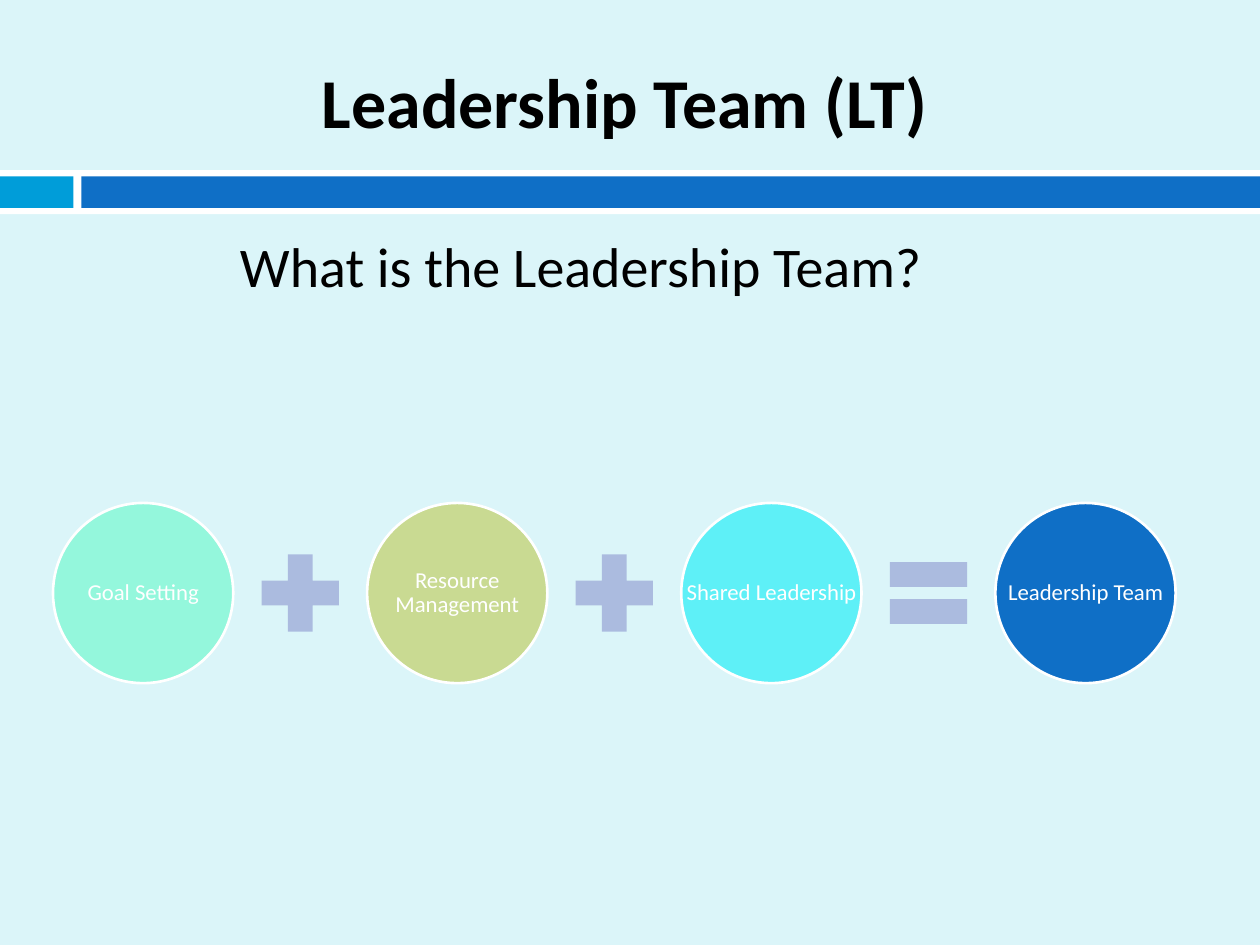
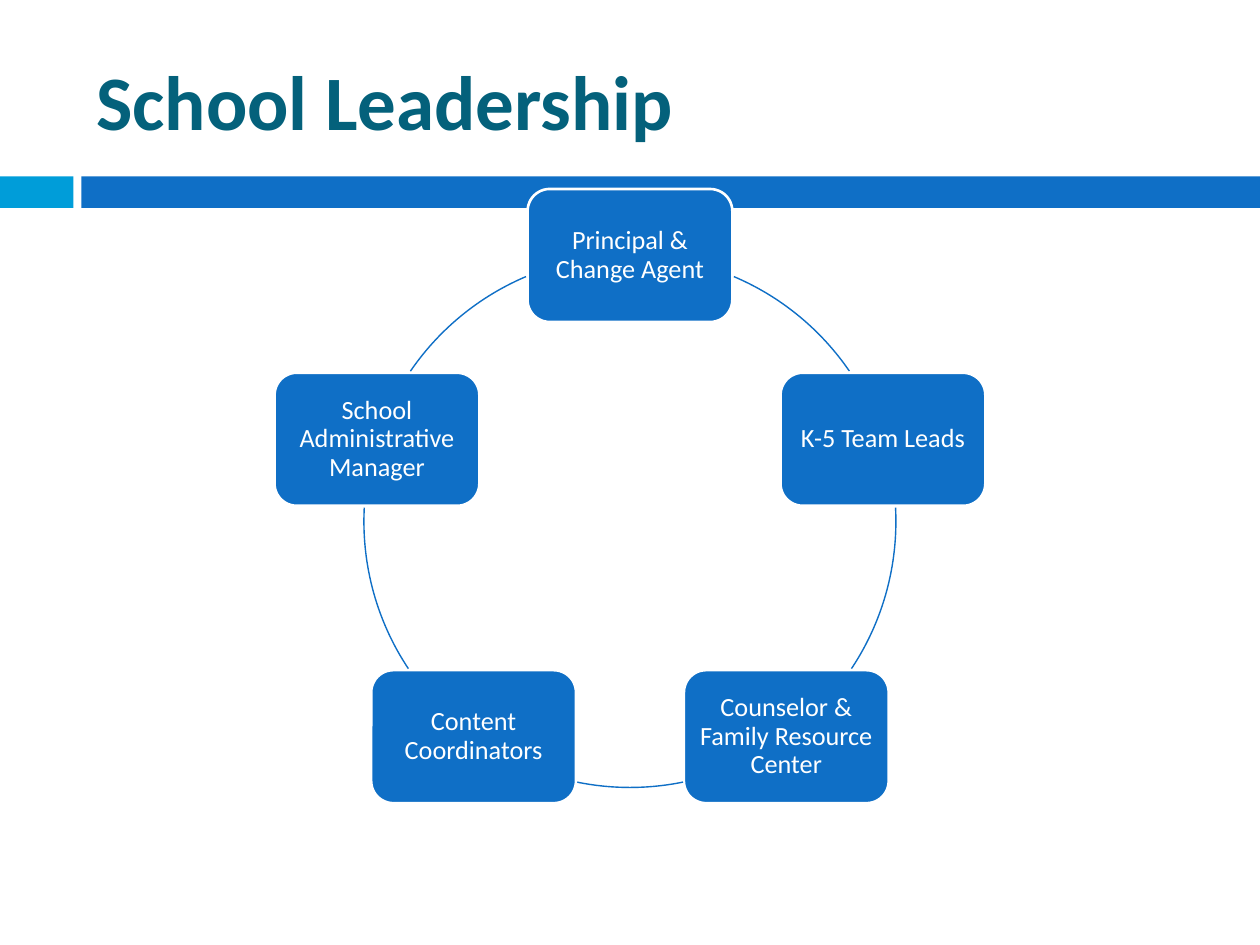
from math import cos, radians, sin

from pptx import Presentation
from pptx.dml.color import RGBColor
from pptx.enum.shapes import MSO_SHAPE
from pptx.enum.text import MSO_ANCHOR, PP_ALIGN
from pptx.util import Pt

FONT = "Calibri"
BLACK, WHITE, TEAL = "000000", "FFFFFF", "04617B"
BLUE, SKY, PALE, LAVENDER = "0F6FC6", "009DD9", "DBF5F9", "ABBBDF"
rgb = RGBColor.from_string


def add_block(slide, preset, left, top, width, height, fill=None, line=None, weight=1.5):
    """Draw a preset shape without shadow; fill and line are optional."""
    block = slide.shapes.add_shape(preset, Pt(left), Pt(top), Pt(width), Pt(height))
    block.shadow.inherit = False
    for paint, colour in ((block.fill, fill), (block.line.fill, line)):
        if colour:
            paint.solid()
            paint.fore_color.rgb = rgb(colour)
        else:
            paint.background()
    if line:
        block.line.width = Pt(weight)
    return block


def write(holder, text, size, colour, bold=False, align=PP_ALIGN.CENTER,
          anchor=MSO_ANCHOR.MIDDLE, inset=None, spacing=None, wrap=True):
    """Fill a shape or text box with one paragraph; a newline breaks the line."""
    frame = holder.text_frame
    frame.word_wrap = wrap
    frame.vertical_anchor = anchor
    if inset is not None:
        frame.margin_left = frame.margin_right = Pt(inset)
        frame.margin_top = frame.margin_bottom = Pt(inset)
    paragraph = frame.paragraphs[0]
    paragraph.alignment = align
    paragraph.line_spacing = spacing
    for number, words in enumerate(text.split("\n")):
        if number:
            paragraph.add_line_break()
        run = paragraph.add_run()
        run.text = words
        run.font.name = FONT
        run.font.size = Pt(size)
        run.font.bold = bold
        run.font.color.rgb = rgb(colour)


deck = Presentation()
deck.slide_width, deck.slide_height = Pt(720), Pt(540)

# Background and bands of both slides
slides = []
for background in (PALE, WHITE):
    slide = deck.slides.add_slide(deck.slide_layouts[6])
    slide.background.fill.solid()
    slide.background.fill.fore_color.rgb = rgb(background)
    add_block(slide, MSO_SHAPE.RECTANGLE, 0, 97.2, 720, 25.2, WHITE)
    add_block(slide, MSO_SHAPE.RECTANGLE, 0, 100.8, 42, 18, SKY)
    add_block(slide, MSO_SHAPE.RECTANGLE, 46.5, 100.8, 673.5, 18, BLUE)
    slides.append(slide)
team_slide, school_slide = slides

# Slide 1: the sum that makes up the Leadership Team
title = team_slide.shapes.add_textbox(Pt(18), Pt(30.2), Pt(678), Pt(55.5))
write(title, "Leadership Team (LT)", 40, BLACK, bold=True, anchor=MSO_ANCHOR.TOP)
question = team_slide.shapes.add_textbox(Pt(29), Pt(129), Pt(606), Pt(50))
write(question, "What is the Leadership Team?", 32, BLACK, anchor=MSO_ANCHOR.TOP)

terms = [
    ("Goal Setting", "94F7DC", MSO_SHAPE.MATH_PLUS),
    ("Resource\nManagement", "C9DA92", MSO_SHAPE.MATH_PLUS),
    ("Shared Leadership", "5EF0F7", MSO_SHAPE.MATH_EQUAL),
    ("Leadership Team", BLUE, None),
]
circle_size, sign_size, term_step, middle = 103, 60, 179.5, 338.9
for number, (term, colour, sign) in enumerate(terms):
    left = 30.3 + number * term_step
    circle = add_block(team_slide, MSO_SHAPE.OVAL, left, middle - circle_size / 2,
                       circle_size, circle_size, colour, WHITE)
    write(circle, term, 13, WHITE, inset=1.5, spacing=0.9, wrap=False)
    if sign:
        sign_left = left + (circle_size + term_step - sign_size) / 2
        add_block(team_slide, sign, sign_left, middle - sign_size / 2,
                  sign_size, sign_size, LAVENDER)

# Slide 2: the ring of school leaders
title = school_slide.shapes.add_textbox(Pt(48), Pt(18), Pt(642), Pt(78))
write(title, "School Leadership", 44, TEAL, bold=True, align=PP_ALIGN.LEFT)

# Each role with the start and end angle of the arc that follows it
roles = [
    ("Principal & Change Agent", 293, 325.6),
    ("K-5 Team Leads", 357, 33.6),
    ("Counselor & Family Resource Center", 78.5, 101.5),
    ("Content Coordinators", 146.4, 183),
    ("School Administrative Manager", 214.4, 247),
]
centre_x, centre_y, radius = 360, 298, 152
role_width, role_height = 117, 76
for number, (role, start, end) in enumerate(roles):
    angle = radians(number * 360 / len(roles) - 90)
    box = add_block(school_slide, MSO_SHAPE.ROUNDED_RECTANGLE,
                    centre_x + radius * cos(angle) - role_width / 2,
                    centre_y + radius * sin(angle) - role_height / 2,
                    role_width, role_height, BLUE, WHITE)
    write(box, role, 15, WHITE, inset=4, spacing=0.9)
    arc = add_block(school_slide, MSO_SHAPE.ARC, centre_x - radius, centre_y - radius,
                    2 * radius, 2 * radius, line=BLUE, weight=0.79)
    # Angles are stored in 60000ths of a degree, adjustments in 100000ths
    arc.adjustments[0], arc.adjustments[1] = start * 0.6, end * 0.6

deck.save("out.pptx")
